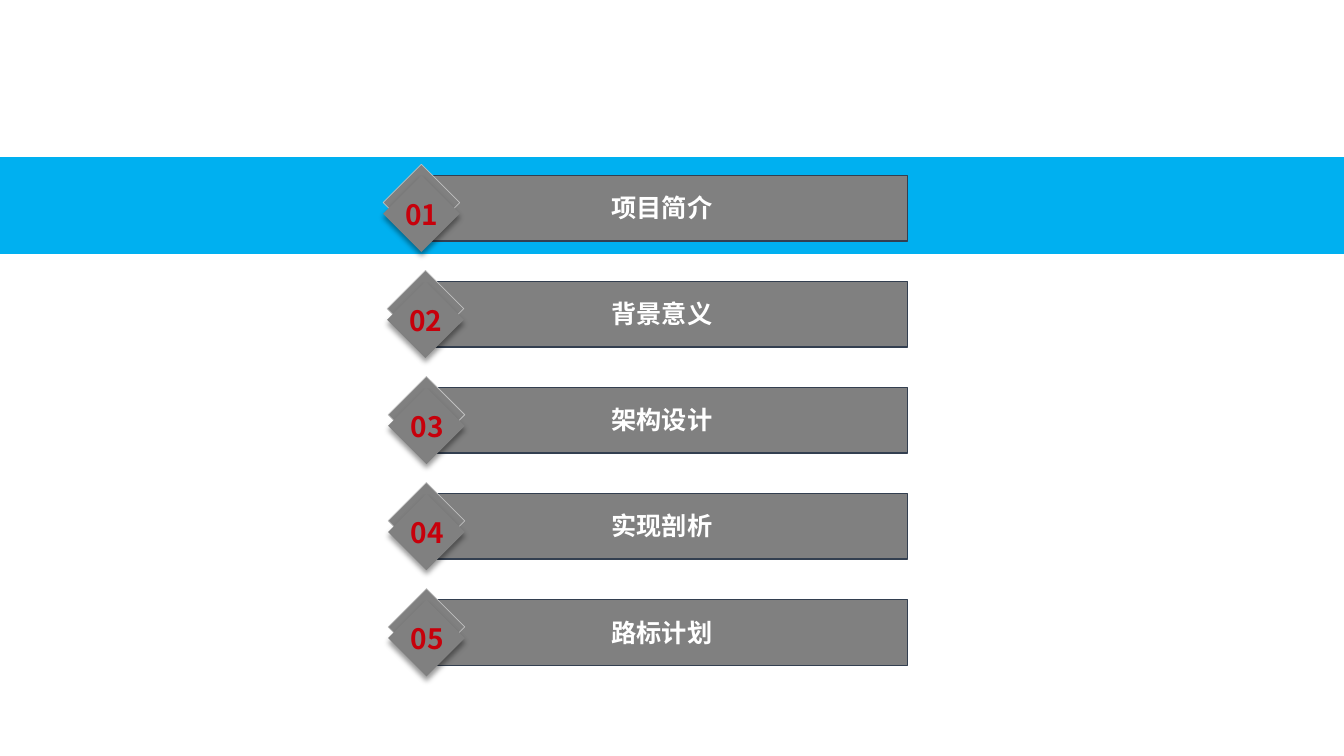
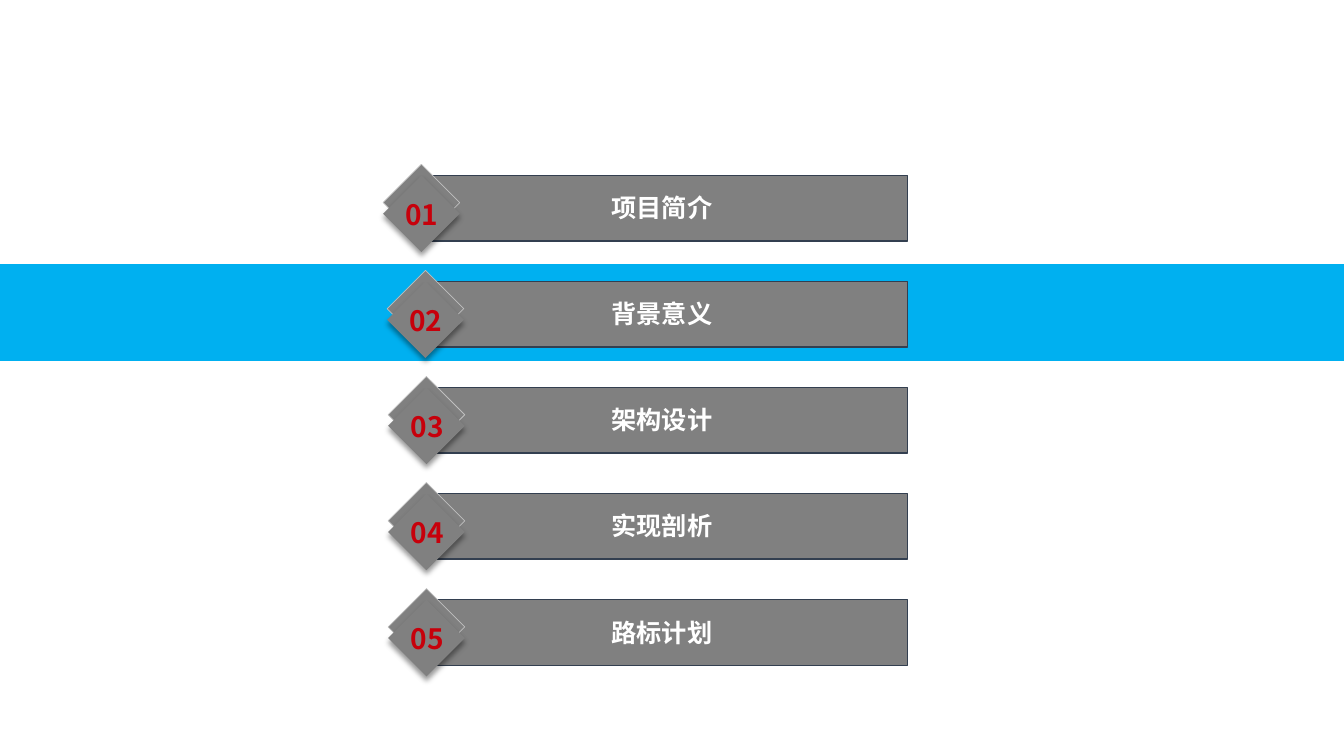
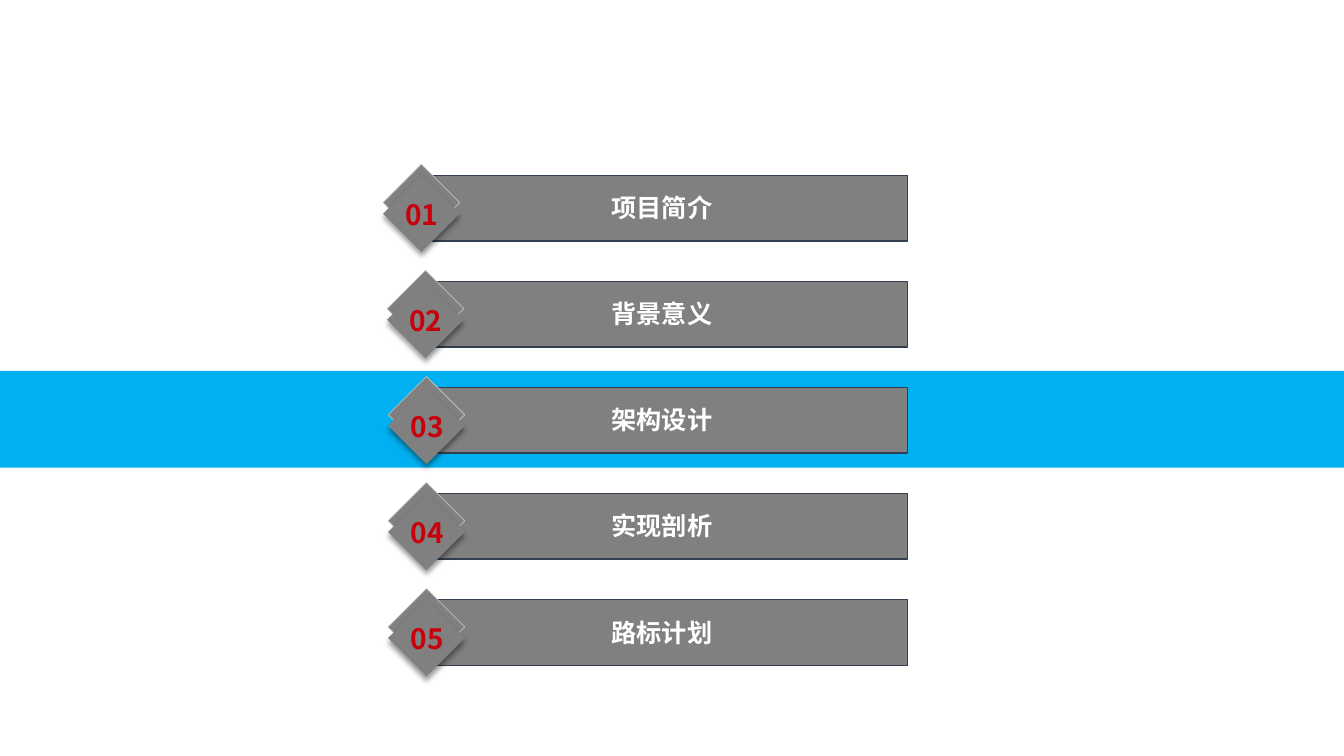
"""Build three agenda slides, each highlighting one chapter."""
from dataclasses import dataclass
from typing import Optional

from lxml.etree import SubElement
from pptx import Presentation
from pptx.dml.color import RGBColor
from pptx.enum.shapes import MSO_SHAPE as Preset
from pptx.enum.text import MSO_ANCHOR as Anchor, MSO_AUTO_SIZE as AutoSize, PP_ALIGN as Align
from pptx.oxml.ns import qn
from pptx.shapes.autoshape import Shape
from pptx.slide import Slide
from pptx.util import Inches, Pt

FONT = "Noto Sans CJK SC"
BLUE = RGBColor(0x00, 0xB0, 0xF0)
GRAY = RGBColor(0x80, 0x80, 0x80)
SLATE = RGBColor(0x33, 0x3F, 0x50)
SILVER = RGBColor(0xBF, 0xBF, 0xBF)
WHITE = RGBColor(0xFF, 0xFF, 0xFF)
RED = RGBColor(0xC7, 0x00, 0x0B)

SLIDE_WIDTH, SLIDE_HEIGHT = 13.33, 7.5
FIRST_TOP, LAST_TOP = 1.63, 5.84
BAND_TOP, BAND_HEIGHT, BAND_PITCH = 1.56, 0.96, 1.06
DIAMOND_SIZE = 0.76


@dataclass(frozen=True)
class Box:
    """Position and size in inches."""

    left: float
    top: float
    width: float
    height: float


@dataclass(frozen=True)
class Chapter:
    """One agenda entry and the left edge of its diamond."""

    title: str
    diamond_left: float


CHAPTERS = (
    Chapter("项目简介", 3.8),
    Chapter("背景意义", 3.84),
    Chapter("架构设计", 3.85),
    Chapter("实现剖析", 3.85),
    Chapter("路标计划", 3.85),
)
PITCH = (LAST_TOP - FIRST_TOP) / (len(CHAPTERS) - 1)


def add_block(shapes, preset: Preset, box: Box, *, fill: RGBColor = GRAY,
              line: Optional[RGBColor] = None, line_width: float = 1) -> Shape:
    """Add a filled preset shape, outlined only when a line colour is given."""
    shape = shapes.add_shape(preset, Inches(box.left), Inches(box.top),
                             Inches(box.width), Inches(box.height))
    shape.fill.solid()
    shape.fill.fore_color.rgb = fill
    if line is None:
        shape.line.fill.background()
    else:
        shape.line.color.rgb = line
        shape.line.width = Pt(line_width)
    shape.shadow.inherit = False
    return shape


def add_drop_shadow(shape: Shape) -> None:
    """Cast a soft black shadow straight down."""
    effects = shape._element.spPr.find(qn("a:effectLst"))
    shadow = SubElement(effects, qn("a:outerShdw"), blurRad=str(Pt(4)), dist=str(Pt(3)),
                        dir="5400000", algn="t", rotWithShape="0")
    color = SubElement(shadow, qn("a:srgbClr"), val="000000")
    SubElement(color, qn("a:alpha"), val="40000")


def add_label(shapes, text: str, box: Box, *, size: float, color: RGBColor) -> None:
    """Add a bold centred label without margins."""
    frame = add_block(shapes, Preset.RECTANGLE, box).text_frame
    frame.margin_left = frame.margin_right = frame.margin_top = frame.margin_bottom = 0
    frame.word_wrap = True
    frame.vertical_anchor = Anchor.BOTTOM
    frame.auto_size = AutoSize.SHAPE_TO_FIT_TEXT
    paragraph = frame.paragraphs[0]
    paragraph.alignment = Align.CENTER
    run = paragraph.add_run()
    run.text = text
    run.font.name = FONT
    run.font.size = Pt(size)
    run.font.bold = True
    run.font.color.rgb = color
    SubElement(run.font._element, qn("a:ea"), typeface=FONT)


def add_chapter(slide: Slide, index: int, chapter: Chapter) -> None:
    """Add the grouped bar, diamonds and labels of one chapter."""
    shapes = slide.shapes.add_group_shape().shapes
    top, left = FIRST_TOP + index * PITCH, chapter.diamond_left
    add_block(shapes, Preset.RECTANGLE, Box(4.23, top + 0.11, 4.77, 0.65), line=SLATE)
    add_label(shapes, chapter.title, Box(5.58, top + 0.28, 1.97, 0.3), size=18, color=WHITE)
    add_block(shapes, Preset.FLOWCHART_DECISION, Box(left, top, DIAMOND_SIZE, DIAMOND_SIZE),
              line=SILVER, line_width=0.5)
    front = add_block(shapes, Preset.FLOWCHART_DECISION,
                      Box(left, top + 0.11, DIAMOND_SIZE, DIAMOND_SIZE))
    add_drop_shadow(front)
    add_label(shapes, f"{index + 1:02}", Box(left + 0.19, top + 0.32, 0.39, 0.34),
              size=20, color=RED)


def add_agenda(presentation, current: int) -> None:
    """Add an agenda slide with a band behind the current chapter."""
    slide = presentation.slides.add_slide(presentation.slide_layouts[6])
    band = Box(0, BAND_TOP + current * BAND_PITCH, SLIDE_WIDTH, BAND_HEIGHT)
    add_block(slide.shapes, Preset.RECTANGLE, band, fill=BLUE)
    for index, chapter in enumerate(CHAPTERS):
        add_chapter(slide, index, chapter)


def main() -> None:
    """Build and save the presentation."""
    presentation = Presentation()
    presentation.slide_width = Inches(SLIDE_WIDTH)
    presentation.slide_height = Inches(SLIDE_HEIGHT)
    for current in range(3):
        add_agenda(presentation, current)
    presentation.save("out.pptx")


if __name__ == "__main__":
    main()
